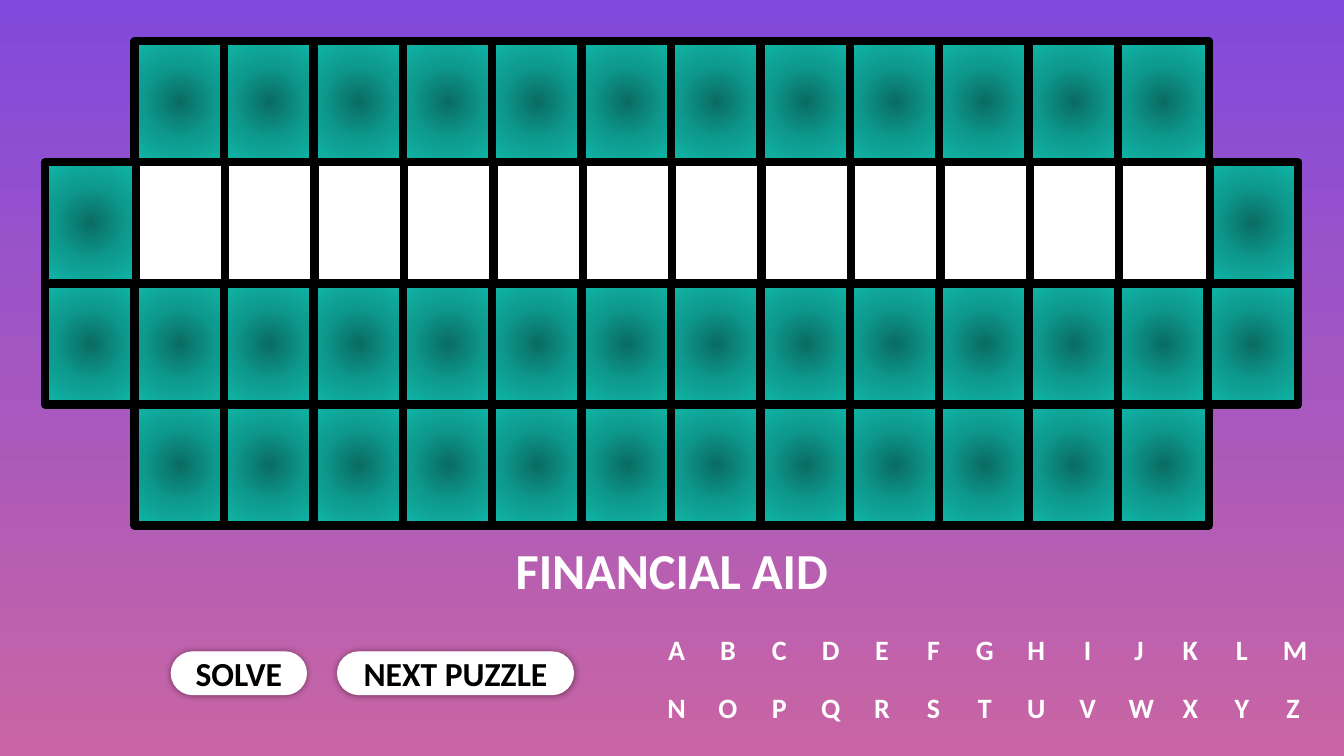
import lxml.etree
import pptx
import pptx.dml.color
import pptx.enum.shapes
import pptx.enum.text
import pptx.oxml
import pptx.oxml.ns
import pptx.util

Cm = pptx.util.Cm
Pt = pptx.util.Pt
SHAPE = pptx.enum.shapes.MSO_SHAPE

COLORS = {
    "sky": "8149DC",
    "dusk": "C965A4",
    "teal_dark": "0A6C63",
    "teal": "0E9A8E",
    "teal_light": "10B7A8",
    "black": "000000",
    "white": "FFFFFF",
}

# Board grid, in cm
COLUMNS = 14
BOARD_LEFT, BOARD_TOP = 1.14, 1.04
TILE_WIDTH, TILE_HEIGHT = 2.29, 3.05
COLUMN_PITCH = 29.29 / (COLUMNS - 1)
ANSWER_SHIFT = 0.03
# T is a teal tile, W a white answer tile, a dot is no tile
BOARD_ROWS = [
    ".TTTTTTTTTTTT.",
    "TWWWWWWWWWWWWT",
    "TTTTTTTTTTTTTT",
    ".TTTTTTTTTTTT.",
]

# Alphabet grid, in cm
ALPHABET_ROWS = ["ABCDEFGHIJKLM", "NOPQRSTUVWXYZ"]
ALPHABET_LEFT, ALPHABET_TOP = 16.54, 15.57
LETTER_PITCH, LETTER_ROW_PITCH = 15.54 / 12, 1.47
LETTER_WIDTH, LETTER_HEIGHT = 1.02, 1.57


def rgb(name):
    return pptx.dml.color.RGBColor.from_string(COLORS[name])


def write_text(holder, text, size, color="white", font="Calibri", bold=True):
    frame = holder.text_frame
    frame.word_wrap = True
    frame.auto_size = pptx.enum.text.MSO_AUTO_SIZE.NONE
    frame.vertical_anchor = pptx.enum.text.MSO_ANCHOR.MIDDLE
    paragraph = frame.paragraphs[0]
    paragraph.alignment = pptx.enum.text.PP_ALIGN.CENTER
    run = paragraph.add_run()
    run.text = text
    run.font.size = Pt(size)
    run.font.name = font
    run.font.bold = bold
    run.font.color.rgb = rgb(color)


def paint_background(slide):
    fill = slide.background.fill
    fill.gradient()
    fill.gradient_angle = 270
    for stop, name in zip(fill.gradient_stops, ("sky", "dusk")):
        stop.color.rgb = rgb(name)


def fill_radial(shape, names):
    """Fill with evenly spaced colours, from the centre outwards."""
    stops = "".join(
        f'<a:gs pos="{100000 * i // (len(names) - 1)}">'
        f'<a:srgbClr val="{COLORS[name]}"/></a:gs>'
        for i, name in enumerate(names)
    )
    radial = pptx.oxml.parse_xml(
        f'<a:gradFill {pptx.oxml.ns.nsdecls("a")} rotWithShape="1">'
        f"<a:gsLst>{stops}</a:gsLst>"
        '<a:path path="circle">'
        '<a:fillToRect l="50000" t="50000" r="50000" b="50000"/>'
        "</a:path></a:gradFill>"
    )
    shape.fill.gradient()
    properties = shape.element.spPr
    properties.replace(properties.find(pptx.oxml.ns.qn("a:gradFill")), radial)


def add_panel(slide, kind, left, top, width, height, line, line_width):
    panel = slide.shapes.add_shape(kind, Cm(left), Cm(top), Cm(width), Cm(height))
    panel.shadow.inherit = False
    panel.fill.solid()
    panel.fill.fore_color.rgb = rgb("white")
    panel.line.color.rgb = rgb(line)
    panel.line.width = Pt(line_width)
    return panel


def add_tiles(slide, mark, shift=0):
    for row, marks in enumerate(BOARD_ROWS):
        for column, tile_mark in enumerate(marks):
            if tile_mark != mark:
                continue
            tile = add_panel(
                slide, SHAPE.RECTANGLE,
                BOARD_LEFT + column * COLUMN_PITCH + shift,
                BOARD_TOP + row * TILE_HEIGHT,
                TILE_WIDTH, TILE_HEIGHT, "black", 6,
            )
            if mark == "T":
                fill_radial(tile, ["teal_dark", "teal", "teal_light"])


def add_alphabet(slide):
    for row, letters in enumerate(ALPHABET_ROWS):
        for column, letter in enumerate(letters):
            letter_box = slide.shapes.add_textbox(
                Cm(ALPHABET_LEFT + column * LETTER_PITCH),
                Cm(ALPHABET_TOP + row * LETTER_ROW_PITCH),
                Cm(LETTER_WIDTH), Cm(LETTER_HEIGHT),
            )
            write_text(letter_box, letter, size=20)


def add_button(slide, label, left, width):
    button = add_panel(
        slide, SHAPE.ROUNDED_RECTANGLE, left, 16.43, width, 1.07, "white", 1
    )
    button.adjustments[0] = 0.5
    effects = button.element.spPr.find(pptx.oxml.ns.qn("a:effectLst"))
    glow = lxml.etree.SubElement(
        effects, pptx.oxml.ns.qn("a:outerShdw"),
        blurRad=str(Pt(5)), dist="0", dir="0", algn="ctr", rotWithShape="0",
    )
    shade = lxml.etree.SubElement(
        glow, pptx.oxml.ns.qn("a:srgbClr"), val=COLORS["black"]
    )
    lxml.etree.SubElement(shade, pptx.oxml.ns.qn("a:alpha"), val="40000")
    write_text(button, label, size=24, color="black")


def set_category(slide, text):
    category = slide.shapes.title
    category.left, category.top = Cm(0), Cm(13.56)
    category.width, category.height = Cm(33.87), Cm(1.57)
    write_text(category, text, size=36)


def main():
    deck = pptx.Presentation()
    deck.slide_width, deck.slide_height = Cm(33.87), Cm(19.05)
    slide = deck.slides.add_slide(deck.slide_layouts[5])
    paint_background(slide)

    # Puzzle board: the answer tiles lie over the teal ones
    add_tiles(slide, "T")
    add_tiles(slide, "W", shift=ANSWER_SHIFT)

    # Category, buttons and letters to pick
    set_category(slide, "FINANCIAL AID")
    add_button(slide, "SOLVE", left=4.32, width=3.4)
    add_button(slide, "NEXT PUZZLE", left=8.51, width=5.94)
    add_alphabet(slide)

    deck.save("out.pptx")


if __name__ == "__main__":
    main()
